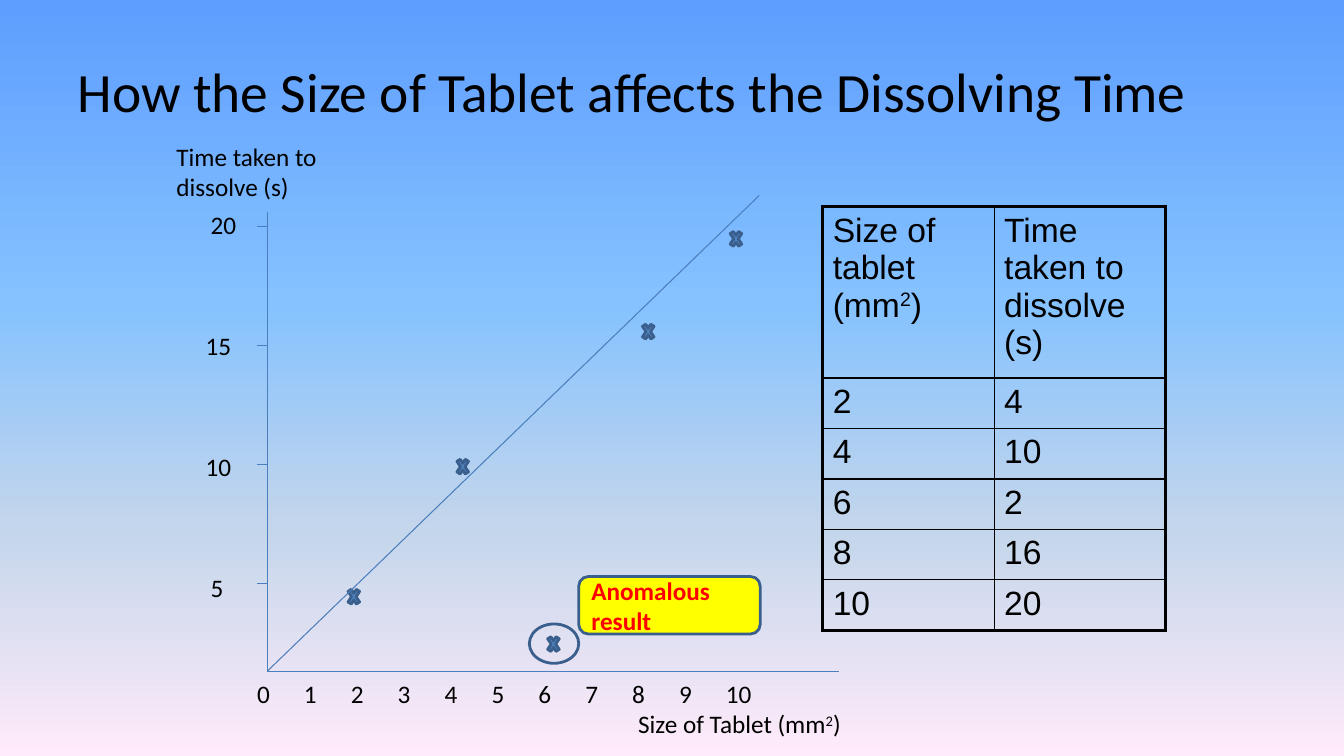
from lxml import etree
from pptx import Presentation
from pptx.dml.color import RGBColor
from pptx.enum import shapes, text
from pptx.oxml import ns
from pptx.util import Inches, Pt

COLORS = {
    "black": "000000", "axis": "4B7EBC", "mark": "4F81BD", "edge": "3A5F8C",
    "yellow": "FFFF00", "red": "FF0000",
}
BACKGROUND = [(0, "5E9EFF"), (40, "85C2FF"), (70, "C4D6EB"), (100, "FFEBFA")]
RESULTS = [(2, 4), (4, 10), (6, 2), (8, 16), (10, 20)]
MARKS = [(3.43, 5.8), (4.51, 4.51), (5.41, 6.27), (6.35, 3.17), (7.22, 2.25)]
ORIGIN = (2.65, 6.66)


def rgb(name):
    return RGBColor.from_string(COLORS[name])


def paint_background(s):
    s.background.fill.gradient()
    grad = next(s._element.iter(ns.qn("a:gradFill")))
    for child in list(grad):
        grad.remove(child)
    stops = etree.SubElement(grad, ns.qn("a:gsLst"))
    for position, color in BACKGROUND:
        stop = etree.SubElement(stops, ns.qn("a:gs"), pos=str(position * 1000))
        etree.SubElement(stop, ns.qn("a:srgbClr"), val=color)
    etree.SubElement(grad, ns.qn("a:lin"), ang="5400000", scaled="0")


def write(tf, content, size, font="Calibri", color="black", bold=False):
    p = tf.paragraphs[0]
    base, mark, rest = content.partition("²")
    for part in (base, "2" if mark else "", rest):
        if part:
            r = p.add_run()
            r.text = part
            r.font.size = Pt(size)
            r.font.name = font
            r.font.bold = bold
            r.font.color.rgb = rgb(color)
    if mark:
        p.runs[1].font._element.set("baseline", "30000")
    return p


def add_text(s, content, x, y, w, h, size=18, wrap=True):
    tf = s.shapes.add_textbox(Inches(x), Inches(y), Inches(w), Inches(h)).text_frame
    tf.word_wrap = wrap
    tf.margin_left = tf.margin_right = tf.margin_top = tf.margin_bottom = 0
    tf.vertical_anchor = text.MSO_ANCHOR.MIDDLE
    return write(tf, content, size)


def add_line(s, start, end):
    line = s.shapes.add_connector(
        shapes.MSO_CONNECTOR.STRAIGHT, *map(Inches, (*start, *end)))
    line.line.color.rgb = rgb("axis")
    line.line.width = Pt(0.75)
    etree.SubElement(line._element.spPr, ns.qn("a:effectLst"))


def add_outlined(s, kind, x, y, w, h, fill=None):
    sp = s.shapes.add_shape(kind, *map(Inches, (x, y, w, h)))
    sp.shadow.inherit = False
    if fill:
        sp.fill.solid()
        sp.fill.fore_color.rgb = rgb(fill)
    else:
        sp.fill.background()
    sp.line.color.rgb = rgb("edge")
    sp.line.width = Pt(2)
    return sp


def set_borders(cell, widths):
    tcPr = cell._tc.get_or_add_tcPr()
    for i, (side, width) in enumerate(zip("LRTB", widths)):
        ln = etree.Element(ns.qn(f"a:ln{side}"), w=str(Pt(width)))
        fill = etree.SubElement(ln, ns.qn("a:solidFill"))
        etree.SubElement(fill, ns.qn("a:srgbClr"), val=COLORS["black"])
        tcPr.insert(i, ln)


def add_results_table(s, rows):
    last = len(rows) - 1
    table = s.shapes.add_table(
        len(rows), 2, Inches(8.16), Inches(2.05), Inches(3.4), Inches(4.2)).table
    table.first_row = table.horz_banding = False
    for column in table.columns:
        column.width = Inches(1.7)
    for i, values in enumerate(rows):
        table.rows[i].height = Inches(0.5 if i else 1.7)
        for j, value in enumerate(values):
            cell = table.cell(i, j)
            cell.fill.background()
            write(cell.text_frame, str(value), 24, "Arial")
            outer = (j == 0, j == 1, i == 0, i == last)
            set_borders(cell, [2.25 if edge else 1 for edge in outer])


def add_axes(s):
    x0, y0 = ORIGIN
    add_line(s, (x0, 2.1), ORIGIN)
    add_line(s, ORIGIN, (8.32, y0))
    for i, value in enumerate((20, 15, 10, 5)):
        tick = 2.25 + i * 1.18
        add_line(s, (x0, tick), (x0 - 0.1, tick))
        left = 2.09 if value in (20, 5) else 2.04
        add_text(s, str(value), left, 2.08 + i * 1.2, 0.3, 0.3)
    for value in range(11):
        add_text(s, str(value), 2.55 + value * 0.465, 6.73, 0.3, 0.3)
    add_text(s, "Time taken to dissolve (s)", 1.75, 1.4, 1.6, 0.6)
    add_text(s, "Size of Tablet (mm²)", 6.33, 7.03, 2.2, 0.3, wrap=False)


def add_anomaly(s):
    add_outlined(s, shapes.MSO_SHAPE.OVAL, 5.25, 6.19, 0.49, 0.39)
    sp = add_outlined(
        s, shapes.MSO_SHAPE.ROUNDED_RECTANGLE, 5.74, 5.72, 1.8, 0.57, "yellow")
    tf = sp.text_frame
    tf.word_wrap = True
    tf.vertical_anchor = text.MSO_ANCHOR.MIDDLE
    p = write(tf, "Anomalous result", 18, color="red", bold=True)
    p.alignment = text.PP_ALIGN.LEFT


def main():
    prs = Presentation()
    prs.slide_width, prs.slide_height = Inches(13.33), Inches(7.5)
    s = prs.slides.add_slide(prs.slide_layouts[6])
    paint_background(s)
    title = add_text(s, "How the Size of Tablet affects the Dissolving Time",
                     0.27, 0.27, 12, 1.25, size=39.6)
    title.alignment = text.PP_ALIGN.CENTER
    add_axes(s)
    for x, y in MARKS:
        add_outlined(s, shapes.MSO_SHAPE.MATH_MULTIPLY, x, y, 0.16, 0.24, "mark")
    add_results_table(
        s, [("Size of tablet (mm²)", "Time taken to dissolve (s)"), *RESULTS])
    add_line(s, ORIGIN, (7.53, 1.94))
    add_anomaly(s)
    prs.save("out.pptx")


if __name__ == "__main__":
    main()
